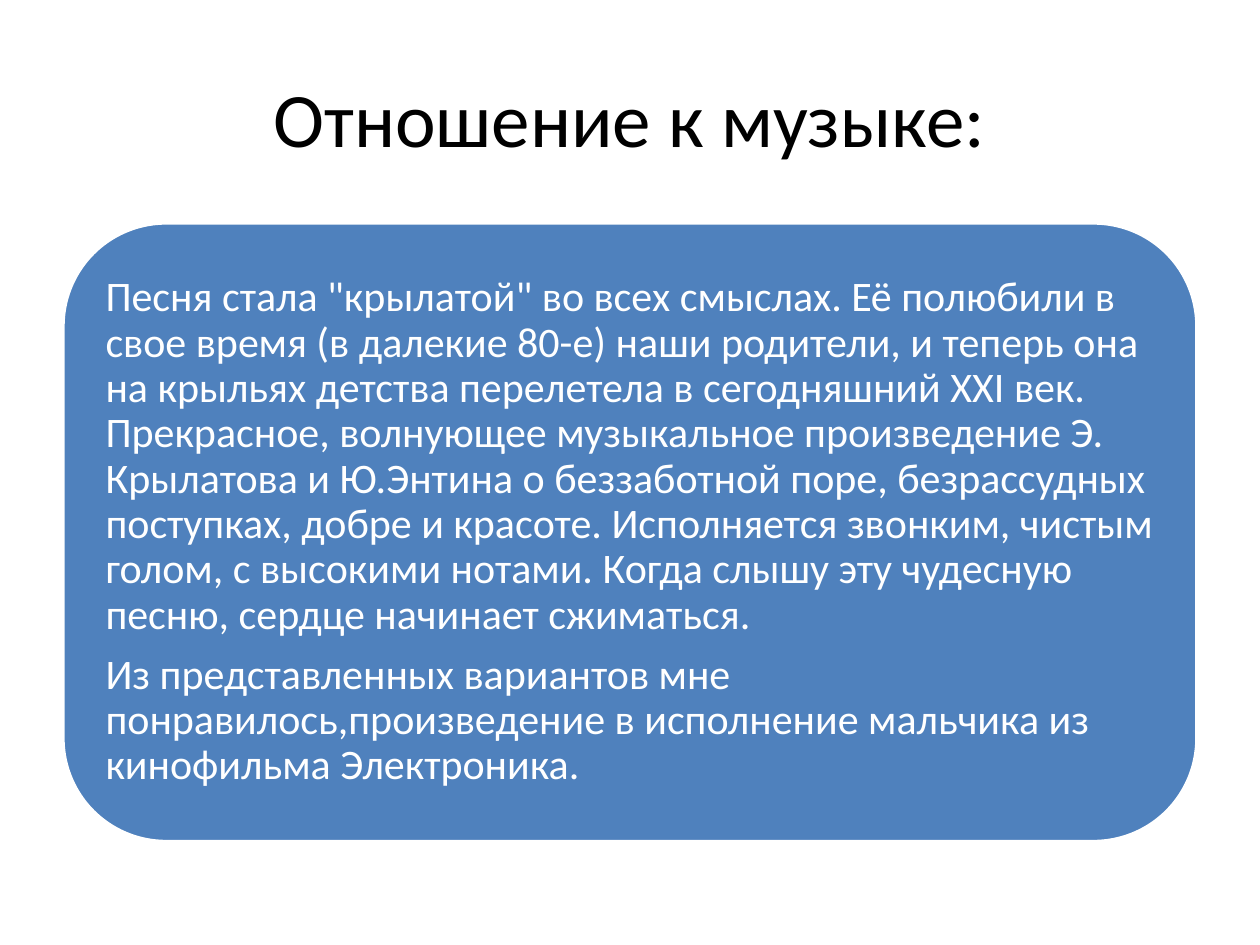
from dataclasses import dataclass
from typing import Any

from pptx import Presentation
from pptx import util as u
from pptx.dml import color
from pptx.enum import shapes, text

TITLE = "Отношение к музыке:"
OPINION = [
    'Песня стала "крылатой" во всех смыслах. Её полюбили в свое время '
    "(в далекие 80-е) наши родители, и теперь она на крыльях детства "
    "перелетела в сегодняшний XXI век. Прекрасное, волнующее музыкальное "
    "произведение Э. Крылатова и Ю.Энтина о беззаботной поре, безрассудных "
    "поступках, добре и красоте. Исполняется звонким, чистым голом, с "
    "высокими нотами. Когда слышу эту чудесную песню, сердце начинает "
    "сжиматься.",
    "Из представленных вариантов мне понравилось,произведение в исполнение "
    "мальчика из кинофильма Электроника.",
]


def rgb(value):
    return color.RGBColor.from_string(value)


def apply(target, values):
    for name, value in values.items():
        setattr(target, name, value)


@dataclass
class SlideBuilder:
    """Draws styled text and panels on the current slide."""

    slide: Any
    font: str = "Calibri"
    fill: str = "4F81BD"
    outline: str = "FFFFFF"
    inset: float = 7.2

    def fill_text(self, shape, paragraphs, size, ink, layout):
        frame = shape.text_frame
        sides = ("left", "top", "right", "bottom")
        margins = {f"margin_{side}": u.Pt(self.inset) for side in sides}
        apply(frame, {"word_wrap": True, "vertical_anchor": text.MSO_ANCHOR.MIDDLE, **margins})
        for index, content in enumerate(paragraphs):
            paragraph = frame.add_paragraph() if index else frame.paragraphs[0]
            apply(paragraph, layout)
            run = paragraph.add_run()
            run.text = content
            apply(run.font, {"name": self.font, "size": u.Pt(size)})
            run.font.color.rgb = rgb(ink)

    def title(self, box, content):
        shape = self.slide.shapes.add_textbox(*map(u.Pt, box))
        self.fill_text(shape, [content], 44, "000000", {"alignment": text.PP_ALIGN.CENTER})

    def panel(self, box, paragraphs):
        shape = self.slide.shapes.add_shape(
            shapes.MSO_SHAPE.ROUNDED_RECTANGLE, *map(u.Pt, box)
        )
        shape.shadow.inherit = False
        shape.fill.solid()
        shape.fill.fore_color.rgb = rgb(self.fill)
        shape.line.color.rgb = rgb(self.outline)
        shape.line.width = u.Pt(2)
        layout = {
            "alignment": text.PP_ALIGN.LEFT,
            "line_spacing": 0.9,
            "space_after": u.Pt(8.4),
        }
        self.fill_text(shape, paragraphs, 24, "FFFFFF", layout)


def main():
    presentation = Presentation()
    apply(presentation, {"slide_width": u.Pt(720), "slide_height": u.Pt(540)})
    builder = SlideBuilder(presentation.slides.add_slide(presentation.slide_layouts[6]))
    builder.title((36, 21.6, 648, 90), TITLE)
    builder.panel((36, 127.4, 648, 353.5), OPINION)
    presentation.save("out.pptx")


if __name__ == "__main__":
    main()
